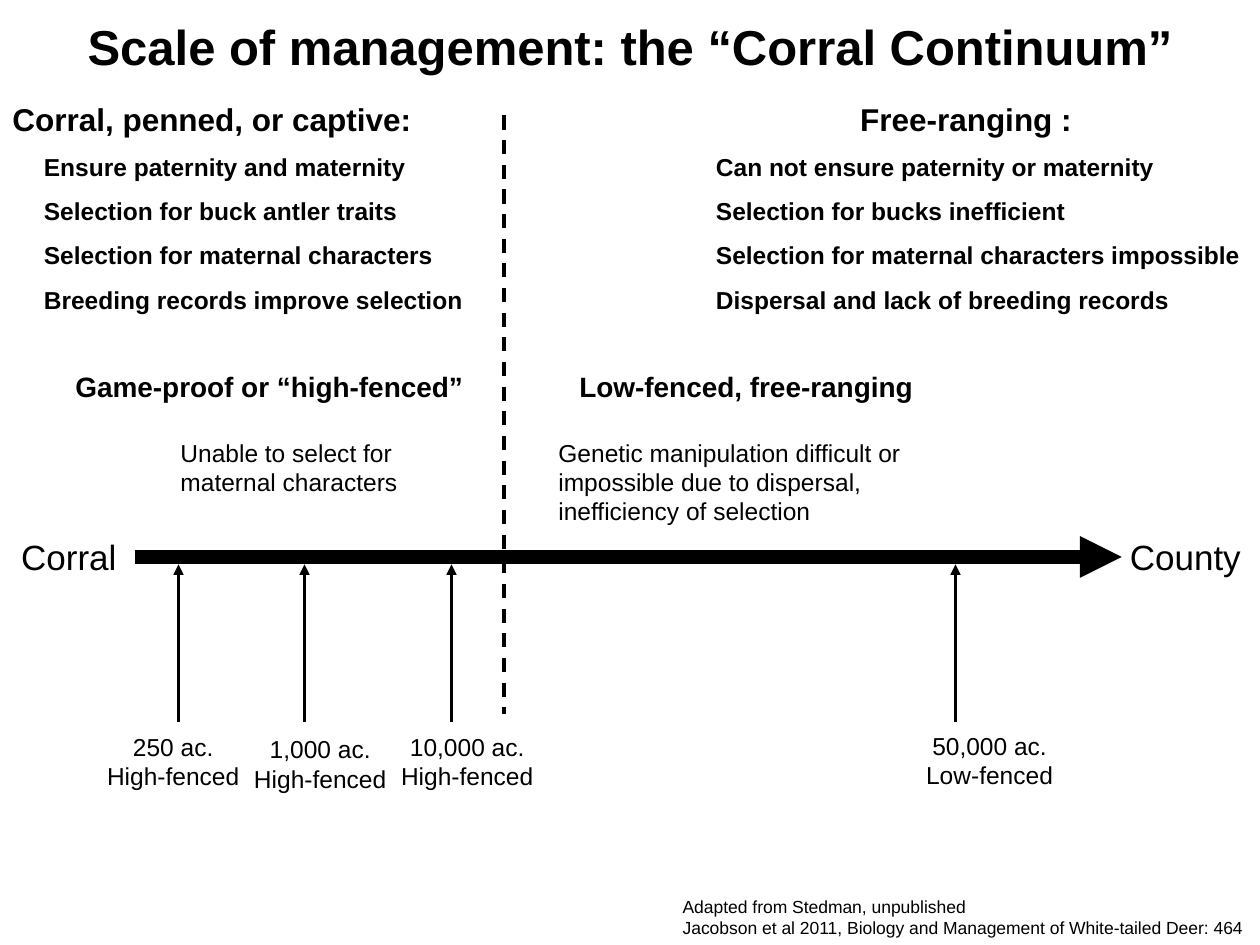
from dataclasses import dataclass

from lxml import etree
from pptx import Presentation
from pptx.dml.color import RGBColor
from pptx.enum.dml import MSO_LINE
from pptx.enum.shapes import MSO_CONNECTOR
from pptx.enum.text import MSO_ANCHOR, MSO_AUTO_SIZE, PP_ALIGN
from pptx.oxml.ns import qn
from pptx.util import Pt

STRAIGHT = MSO_CONNECTOR.STRAIGHT
DASH = MSO_LINE.DASH
TOP = MSO_ANCHOR.TOP
GROW = MSO_AUTO_SIZE.SHAPE_TO_FIT_TEXT
LEFT, CENTER = PP_ALIGN.LEFT, PP_ALIGN.CENTER


@dataclass(frozen=True)
class Theme:
    """Typeface, colour, type sizes and line widths of the slide."""
    font: str = "Arial"
    ink: RGBColor = RGBColor(0, 0, 0)
    title: int = 28
    end: int = 20
    heading: int = 18
    zone: int = 16
    body: int = 14
    citation: int = 10
    axis: float = 8
    divider: float = 2
    pointer: float = 1.5


THEME = Theme()


def style(paragraph, size, bold=False, align=LEFT):
    """Align a paragraph and format its runs."""
    paragraph.alignment = align
    for run in paragraph.runs:
        run.font.name = THEME.font
        run.font.size = Pt(size)
        run.font.bold = bold
        run.font.color.rgb = THEME.ink


def add_text(slide, box, lines, size, bold=False, align=LEFT, wrap=True):
    """Add a text box with one paragraph per line and return its frame."""
    frame = slide.shapes.add_textbox(*map(Pt, box)).text_frame
    frame.word_wrap = wrap
    frame.auto_size = GROW
    frame.text = "\n".join(lines)
    for paragraph in frame.paragraphs:
        style(paragraph, size, bold, align)
    return frame


def add_line(slide, start, end, width, arrow=False):
    """Draw a straight line, with an arrowhead at its end if asked."""
    connector = slide.shapes.add_connector(STRAIGHT, *map(Pt, (*start, *end)))
    connector.line.color.rgb = THEME.ink
    connector.line.width = Pt(width)
    if arrow:
        etree.SubElement(connector.line._get_or_add_ln(), qn("a:tailEnd"), type="triangle")
    etree.SubElement(connector._element.spPr, qn("a:effectLst"))
    return connector


def place_title(slide, box, text):
    """Move, fill and format the title placeholder."""
    title = slide.shapes.title
    title.left, title.top, title.width, title.height = map(Pt, box)
    frame = title.text_frame
    frame.text = text
    frame.word_wrap = True
    frame.auto_size = GROW
    frame.vertical_anchor = TOP
    style(frame.paragraphs[0], THEME.title, True, CENTER)


def place_traits(slide, box, heading, traits, heading_align):
    """Place a bold heading above an indented list of traits."""
    frame = add_text(slide, box, [heading, *traits], THEME.body, True)
    first, *rest = frame.paragraphs
    style(first, THEME.heading, True, heading_align)
    for paragraph in rest:
        paragraph.line_spacing = 1.5
        paragraph._p.get_or_add_pPr().set("marL", str(Pt(18)))


def place_zone(slide, box, heading, note, note_inset, note_width):
    """Place a zone heading with an explanatory note below it."""
    left, top, width, height = box
    add_text(slide, (left, top, width, 26.6), [heading], THEME.zone, True)
    note_box = (left + note_inset, top + 39, note_width, height - 39)
    add_text(slide, note_box, [note], THEME.body)


def place_scale(slide, box, ends, sites):
    """Place the axis arrow, its end labels and the sites pointing at it."""
    left, top, width, height = box
    axis_y = top + 15.75
    add_line(slide, (left + 72, axis_y), (left + 636, axis_y), THEME.axis, True)
    for label, x, wrap in zip(ends, (left, left + width - 78.5), (True, False)):
        add_text(slide, (x, top, 78.5, 31.5), [label], THEME.end, wrap=wrap)
    for x, label_left, label_top, label_width, lines in sites:
        add_line(slide, (x, top + 110), (x, top + 20), THEME.pointer, True)
        label_box = (label_left, label_top, label_width, top + height - label_top)
        add_text(slide, label_box, lines, THEME.body, align=CENTER, wrap=False)


def place_divider(slide, box):
    """Draw the dashed divider down the left edge of its box."""
    left, top, _, height = box
    divider = add_line(slide, (left, top), (left, top + height), THEME.divider)
    divider.line.dash_style = DASH


def place_citation(slide, box, lines):
    """Place the source lines at the foot of the slide."""
    add_text(slide, box, lines, THEME.citation, wrap=False)


def main():
    """Build and save the slide."""
    deck = Presentation()
    deck.slide_width, deck.slide_height = Pt(720), Pt(540)
    slide = deck.slides.add_slide(deck.slide_layouts[5])

    place_title(slide, (0, 6, 720, 41), "Scale of management: the “Corral Continuum”")
    place_traits(slide, (0, 53.5, 282, 131), "Corral, penned, or captive:", [
        "Ensure paternity and maternity",
        "Selection for buck antler traits",
        "Selection for maternal characters",
        "Breeding records improve selection",
    ], LEFT)
    place_traits(slide, (384, 53.5, 336, 131), "Free-ranging :", [
        "Can not ensure paternity or maternity",
        "Selection for bucks inefficient",
        "Selection for maternal characters impossible",
        "Dispersal and lack of breeding records",
    ], CENTER)
    place_zone(slide, (36, 207.5, 240, 80), "Game-proof or “high-fenced”",
               "Unable to select for maternal characters", 60, 156)
    place_zone(slide, (324, 207.5, 216, 97), "Low-fenced, free-ranging",
               "Genetic manipulation difficult or impossible due to dispersal, "
               "inefficiency of selection", -12, 252)
    place_scale(slide, (5, 302.5, 712, 154), ("Corral", "County"), [
        (102, 54, 414.75, 90, ("250 ac.", "High-fenced")),
        (174, 138, 416, 90, ("1,000 ac.", "High-fenced")),
        (258, 222, 414.75, 90, ("10,000 ac.", "High-fenced")),
        (546, 522, 414, 87, ("50,000 ac.", "Low-fenced")),
    ])
    place_divider(slide, (288, 66, 0, 342))
    place_citation(slide, (383, 508.5, 337, 31.5), [
        "Adapted from Stedman, unpublished",
        "Jacobson et al 2011, Biology and Management of White-tailed Deer: 464",
    ])
    deck.save("out.pptx")


if __name__ == "__main__":
    main()
